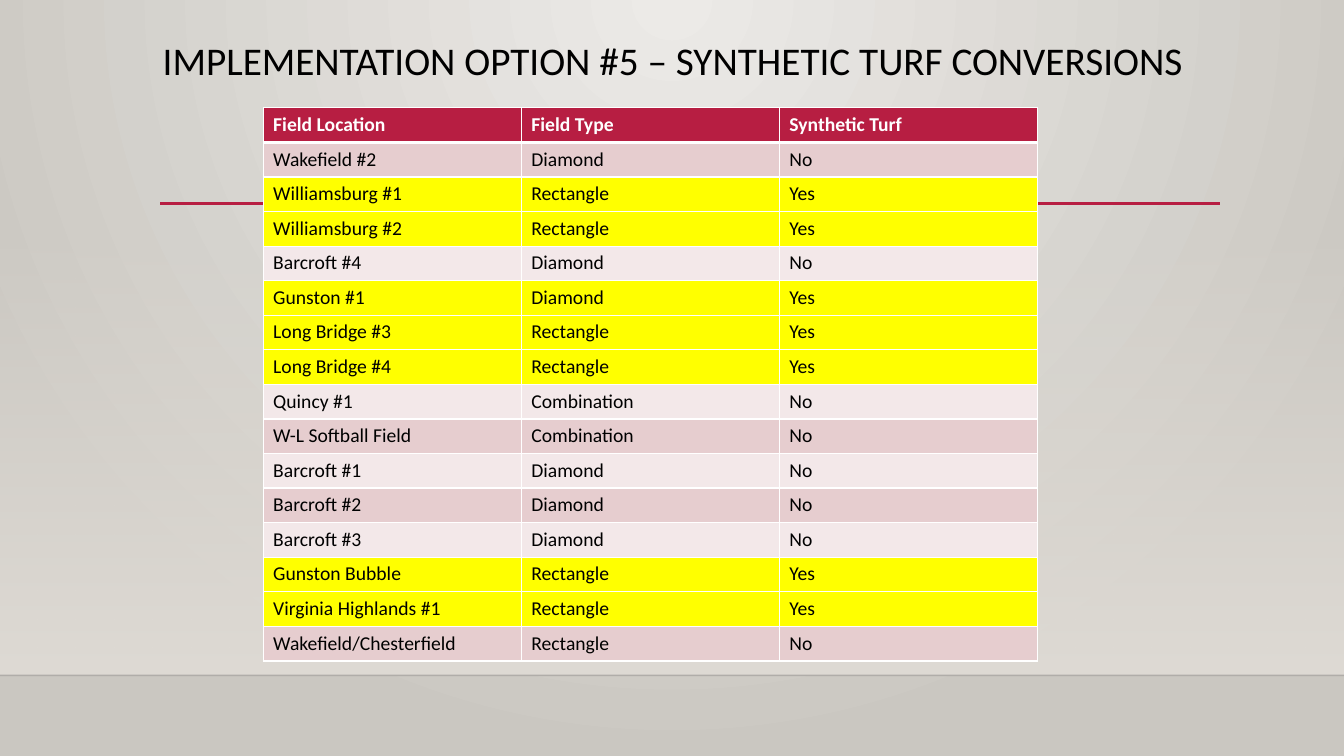
from pptx import Presentation
from pptx.dml.color import RGBColor
from pptx.enum.shapes import MSO_CONNECTOR, MSO_SHAPE
from pptx.enum.text import MSO_ANCHOR, PP_ALIGN
from pptx.oxml import parse_xml
from pptx.oxml.ns import nsdecls, qn
from pptx.oxml.xmlchemy import OxmlElement
from pptx.util import Inches, Pt

RECT = MSO_SHAPE.RECTANGLE
STRAIGHT = MSO_CONNECTOR.STRAIGHT
TOP = MSO_ANCHOR.TOP
LEFT, CENTER = PP_ALIGN.LEFT, PP_ALIGN.CENTER

FONT = "Calibri"
COLORS = {
    "text": "000000", "white": "FFFFFF", "accent": "B71E42",
    "band_dark": "E6CDCF", "band_light": "F3E8E9", "synthetic": "FFFF00",
    "glow": "ECEAE7", "edge": "CAC7C1", "wall": "DFDBD5", "floor": "000001",
}
HEADER = ("Field Location", "Field Type", "Synthetic Turf")
FIELDS = [
    ("Wakefield #2", "Diamond", "No"),
    ("Williamsburg #1", "Rectangle", "Yes"),
    ("Williamsburg #2", "Rectangle", "Yes"),
    ("Barcroft #4", "Diamond", "No"),
    ("Gunston #1", "Diamond", "Yes"),
    ("Long Bridge #3", "Rectangle", "Yes"),
    ("Long Bridge #4", "Rectangle", "Yes"),
    ("Quincy #1", "Combination", "No"),
    ("W-L Softball Field", "Combination", "No"),
    ("Barcroft #1", "Diamond", "No"),
    ("Barcroft #2", "Diamond", "No"),
    ("Barcroft #3", "Diamond", "No"),
    ("Gunston Bubble", "Rectangle", "Yes"),
    ("Virginia Highlands #1", "Rectangle", "Yes"),
    ("Wakefield/Chesterfield", "Rectangle", "No"),
]


def rgb(name):
    """Return the named colour."""
    return RGBColor.from_string(COLORS[name])


def set_text(tf, text, size=14, color="text", bold=False, align=LEFT, spacing=None):
    """Write one formatted paragraph into a text frame."""
    p = tf.paragraphs[0]
    p.alignment = align
    p.line_spacing = spacing
    r = p.add_run()
    r.text = text
    r.font.name = FONT
    r.font.size = Pt(size)
    r.font.bold = bold
    r.font.color.rgb = rgb(color)


def set_gradient(fill, props, stops, direction):
    """Fill with a gradient of (colour, opacity percent) stops."""
    fill.gradient()
    last = len(stops) - 1
    stop_xml = "".join(
        f'<a:gs pos="{i * 100000 // last}"><a:srgbClr val="{COLORS[color]}">'
        f'<a:alpha val="{opacity * 1000}"/></a:srgbClr></a:gs>'
        for i, (color, opacity) in enumerate(stops))
    gradient = parse_xml(
        f'<a:gradFill {nsdecls("a")} rotWithShape="1"><a:gsLst>{stop_xml}</a:gsLst>'
        f'{direction}</a:gradFill>')
    props.replace(props.find(qn("a:gradFill")), gradient)


def add_background(s):
    """Add the radial background and the fading wall panel."""
    fill = s.background.fill
    set_gradient(fill, s.element.cSld.bg.bgPr, [("glow", 100), ("edge", 100)],
                 '<a:path path="circle"><a:fillToRect l="43000" t="0" r="43000" b="100000"/></a:path>')
    wall = s.shapes.add_shape(RECT, 0, Inches(2.21), Inches(13.33), Inches(4.49))
    wall.shadow.inherit = False
    wall.line.fill.background()
    set_gradient(wall.fill, wall.element.spPr, [("wall", 0), ("wall", 100)],
                 '<a:lin ang="5400000" scaled="0"/>')


def add_rule(s, x1, x2, y, color, width, opacity=100):
    """Add a horizontal line."""
    line = s.shapes.add_connector(STRAIGHT, Inches(x1), Inches(y), Inches(x2), Inches(y))
    line.line.color.rgb = rgb(color)
    line.line.width = Pt(width)
    alpha = OxmlElement("a:alpha")
    alpha.set("val", str(opacity * 1000))
    next(line.element.spPr.iter(qn("a:srgbClr"))).append(alpha)
    line.element.spPr.append(OxmlElement("a:effectLst"))


def add_title(s, text):
    """Place and format the slide title."""
    title = s.shapes.title
    title.left, title.top = Inches(0.19), Inches(0.36)
    title.width, title.height = Inches(12.96), Inches(1.15)
    tf = title.text_frame
    tf.word_wrap = True
    tf.vertical_anchor = TOP
    set_text(tf, text, size=28, align=CENTER, spacing=0.9)


def set_borders(cell, top, bottom):
    """Draw white cell borders, with top and bottom widths in points."""
    tc_pr = cell._tc.get_or_add_tcPr()
    for side, width in (("L", 1), ("R", 1), ("T", top), ("B", bottom)):
        tc_pr.append(parse_xml(
            f'<a:ln{side} {nsdecls("a")} w="{Pt(width)}"><a:solidFill>'
            f'<a:srgbClr val="{COLORS["white"]}"/></a:solidFill></a:ln{side}>'))


def row_fill(row, values):
    """Choose a row colour: header, synthetic turf or alternating band."""
    if row == 0:
        return "accent"
    if values[-1] == "Yes":
        return "synthetic"
    return "band_dark" if row % 2 else "band_light"


def add_field_table(s):
    """Add the table of fields with synthetic turf highlighted."""
    rows = [HEADER] + FIELDS
    table = s.shapes.add_table(len(rows), len(HEADER), Inches(2.61), Inches(1.07),
                               Inches(7.68), Inches(5.49)).table
    for i, values in enumerate(rows):
        header = i == 0
        for j, value in enumerate(values):
            cell = table.cell(i, j)
            set_borders(cell, top=3 if i == 1 else 1, bottom=3 if header else 1)
            cell.fill.solid()
            cell.fill.fore_color.rgb = rgb(row_fill(i, values))
            set_text(cell.text_frame, value, bold=header,
                     color="white" if header else "text")


def main():
    """Build the slide."""
    prs = Presentation()
    prs.slide_width, prs.slide_height = Inches(13.33), Inches(7.5)
    s = prs.slides.add_slide(prs.slide_layouts[5])
    add_background(s)
    add_rule(s, 0, 13.33, 6.7, "floor", 1, opacity=20)
    add_rule(s, 1.59, 12.1, 2.02, "accent", 2.5)
    add_title(s, "IMPLEMENTATION OPTION #5 – SYNTHETIC TURF CONVERSIONS")
    add_field_table(s)
    prs.save("out.pptx")


if __name__ == "__main__":
    main()
